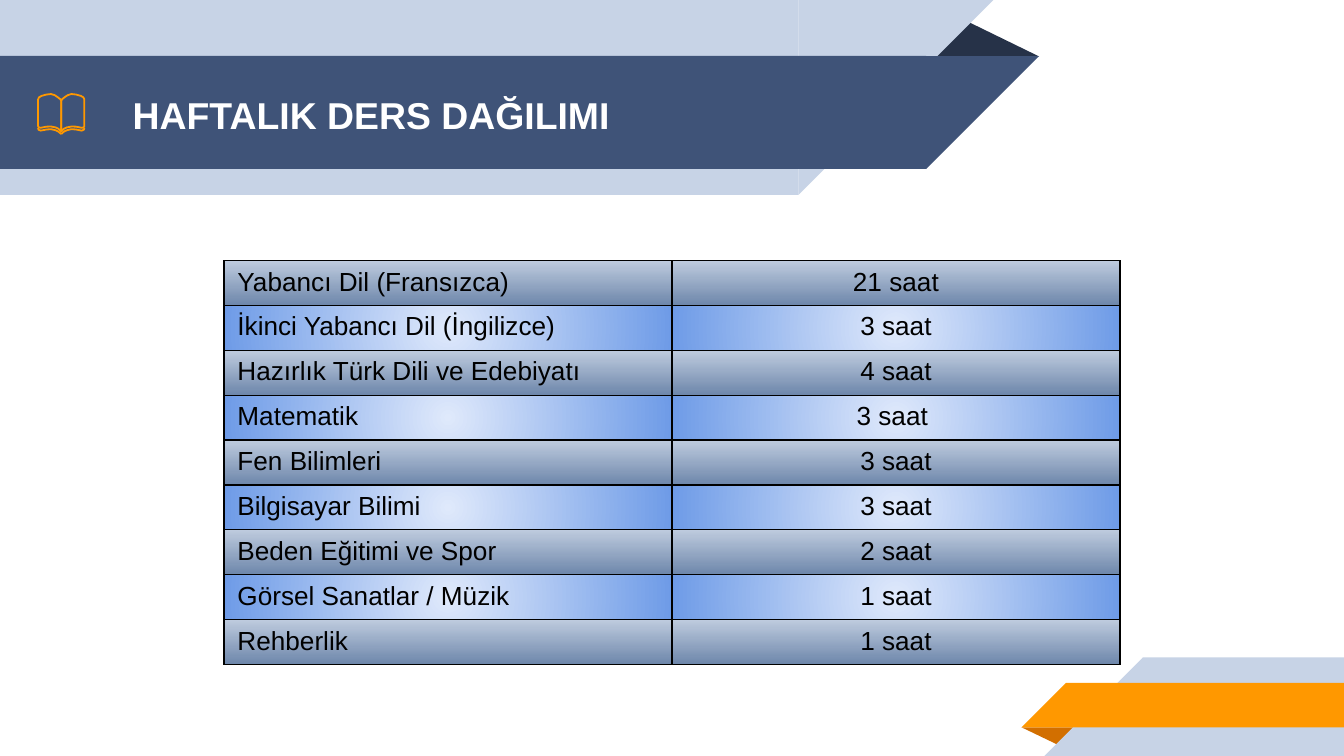
from dataclasses import dataclass

from pptx import Presentation
from pptx.dml.color import RGBColor
from pptx.enum.shapes import MSO_SHAPE as Shape
from pptx.enum.text import MSO_ANCHOR as Anchor, PP_ALIGN as Align
from pptx.oxml import parse_xml
from pptx.oxml.ns import nsdecls
from pptx.util import Pt


@dataclass(frozen=True)
class Theme:
    font: str = "Arial"
    title_size: float = 20
    table_size: float = 14
    white: str = "FFFFFF"
    black: str = "000000"
    navy: str = "3F5378"
    dark_navy: str = "263248"
    pale: str = "C7D3E6"
    orange: str = "FF9800"
    dark_orange: str = "D26F00"
    steel_light: str = "BECBDE"
    steel_dark: str = "6E87AB"
    blue_light: str = "DFE9FB"
    blue_dark: str = "6E9BE7"


THEME = Theme()
WIDTH, HEIGHT = 720, 405

LESSONS = [
    ("Yabancı Dil (Fransızca)", "21 saat"),
    ("İkinci Yabancı Dil (İngilizce)", "3 saat"),
    ("Hazırlık Türk Dili ve Edebiyatı", "4 saat"),
    ("Matematik", "3 saat "),
    ("Fen Bilimleri", "3 saat"),
    ("Bilgisayar Bilimi", "3 saat"),
    ("Beden Eğitimi ve Spor", "2 saat"),
    ("Görsel Sanatlar / Müzik", "1 saat"),
    ("Rehberlik", "1 saat"),
]

# Left half of the book: distance from the spine, height on the page
SPINE = 32.8
COVER_EDGE = [(12.4, 68.6), (12.2, 69.5), (11, 70), (8, 69.4), (5.5, 69.2),
              (3, 69.8), (1.5, 70.5), (0, 71.8)]
LEAF = [(0, 54), (0, 70.4), (1.5, 69), (3, 68.3), (5.5, 67.8), (8, 67.9),
        (11, 68.5), (12, 68.3), (12.4, 67.7), (12.4, 53.3), (11.9, 52.2),
        (10.5, 51.4), (8, 50.7), (5.5, 50.4), (3.5, 51), (2, 52), (0.5, 53.2)]


def color(value):
    return RGBColor.from_string(value)


def add_block(page, kind, left, top, width, height, fill, rotation=0, flip=False):
    block = page.shapes.add_shape(kind, Pt(left), Pt(top), Pt(width), Pt(height))
    block.shadow.inherit = False
    block.fill.solid()
    block.fill.fore_color.rgb = color(fill)
    block.line.fill.background()
    block.rotation = rotation
    if flip:
        block._element.spPr.xfrm.set("flipH", "1")
    return block


def add_fold(page, left, top, width, height, fill, rotation=0):
    fold = add_block(page, Shape.ISOSCELES_TRIANGLE, left, top, width, height,
                     fill, rotation)
    fold.adjustments[0] = 0.324


def add_header_band(page, top, width, height, fill):
    """Band from the left edge whose right end slopes at 45 degrees."""
    add_block(page, Shape.RECTANGLE, 0, top, width, height, fill)
    add_block(page, Shape.RIGHT_TRIANGLE, width, top, height, height, fill, 180, True)


def add_footer_band(page, left, top, height, fill):
    """Band to the right edge whose left end slopes at 45 degrees."""
    start = left + height
    add_block(page, Shape.RIGHT_TRIANGLE, left, top, height, height, fill, flip=True)
    add_block(page, Shape.RECTANGLE, start, top, WIDTH - start, height, fill)


def style_text(paragraph, size, fill, bold=False):
    for span in paragraph.runs:
        span.font.name = THEME.font
        span.font.size = Pt(size)
        span.font.bold = bold
        span.font.color.rgb = color(fill)


def add_title(page, text):
    box = page.shapes.add_textbox(Pt(64), Pt(31), Pt(414), Pt(60.5))
    frame = box.text_frame
    frame.word_wrap = True
    frame.vertical_anchor = Anchor.MIDDLE
    frame.margin_left = frame.margin_right = Pt(7.2)
    frame.margin_top = frame.margin_bottom = Pt(7.2)
    frame.text = text
    style_text(frame.paragraphs[0], THEME.title_size, THEME.white, bold=True)


def add_outline(page, points, closed):
    corners = [(Pt(x), Pt(y)) for x, y in points]
    builder = page.shapes.build_freeform(*corners[0])
    builder.add_line_segments(corners[1:], close=closed)
    outline = builder.convert_to_shape()
    outline.shadow.inherit = False
    outline.fill.background()
    outline.line.color.rgb = color(THEME.orange)
    outline.line.width = Pt(0.96)


def add_book(page):
    for points, closed in ((COVER_EDGE, False), (LEAF, True)):
        for side in (-1, 1):
            add_outline(page, [(SPINE + side * x, y) for x, y in points], closed)


def paint_cell(cell, start, end, direction):
    """Thin black borders, then a two-colour gradient."""
    properties = cell._tc.get_or_add_tcPr()
    for edge in ("lnL", "lnR", "lnT", "lnB"):
        properties.append(parse_xml(
            f'<a:{edge} {nsdecls("a")} w="{Pt(0.75)}"><a:solidFill>'
            f'<a:srgbClr val="{THEME.black}"/></a:solidFill></a:{edge}>'))
    properties.append(parse_xml(
        f'<a:gradFill {nsdecls("a")} rotWithShape="1"><a:gsLst>'
        f'<a:gs pos="0"><a:srgbClr val="{start}"/></a:gs>'
        f'<a:gs pos="100000"><a:srgbClr val="{end}"/></a:gs>'
        f'</a:gsLst>{direction}</a:gradFill>'))


def add_lesson_table(page):
    row_height = 22.9
    table = page.shapes.add_table(len(LESSONS), 2, Pt(120), Pt(139.6), Pt(480),
                                  Pt(row_height * len(LESSONS))).table
    table.first_row = table.horz_banding = False
    downward = '<a:lin ang="5400000" scaled="0"/>'
    radial = ('<a:path path="circle"><a:fillToRect l="50000" t="50000" '
              'r="50000" b="50000"/></a:path>')
    paints = [(THEME.steel_light, THEME.steel_dark, downward),
              (THEME.blue_light, THEME.blue_dark, radial)]
    for index, lesson in enumerate(LESSONS):
        table.rows[index].height = Pt(row_height)
        for column, align in enumerate((Align.LEFT, Align.CENTER)):
            cell = table.cell(index, column)
            cell.text_frame.text = lesson[column]
            para = cell.text_frame.paragraphs[0]
            para.alignment = align
            style_text(para, THEME.table_size, THEME.black)
            paint_cell(cell, *paints[index % 2])


def main():
    deck = Presentation()
    deck.slide_width, deck.slide_height = Pt(WIDTH), Pt(HEIGHT)
    page = deck.slides.add_slide(deck.slide_layouts[6])

    add_fold(page, 495.4, 10, 61.2, 20.2, THEME.dark_navy)
    add_header_band(page, 0, 427.7, 104.4, THEME.pale)
    add_header_band(page, 30, 496.2, 60.5, THEME.navy)

    add_fold(page, 547.2, 389.6, 31, 10.1, THEME.dark_orange, 180)
    add_footer_band(page, 559.5, 352.2, 52.8, THEME.pale)
    add_footer_band(page, 547.2, 365.8, 23.9, THEME.orange)

    add_title(page, "HAFTALIK DERS DAĞILIMI")
    add_lesson_table(page)
    add_book(page)
    deck.save("out.pptx")


if __name__ == "__main__":
    main()
